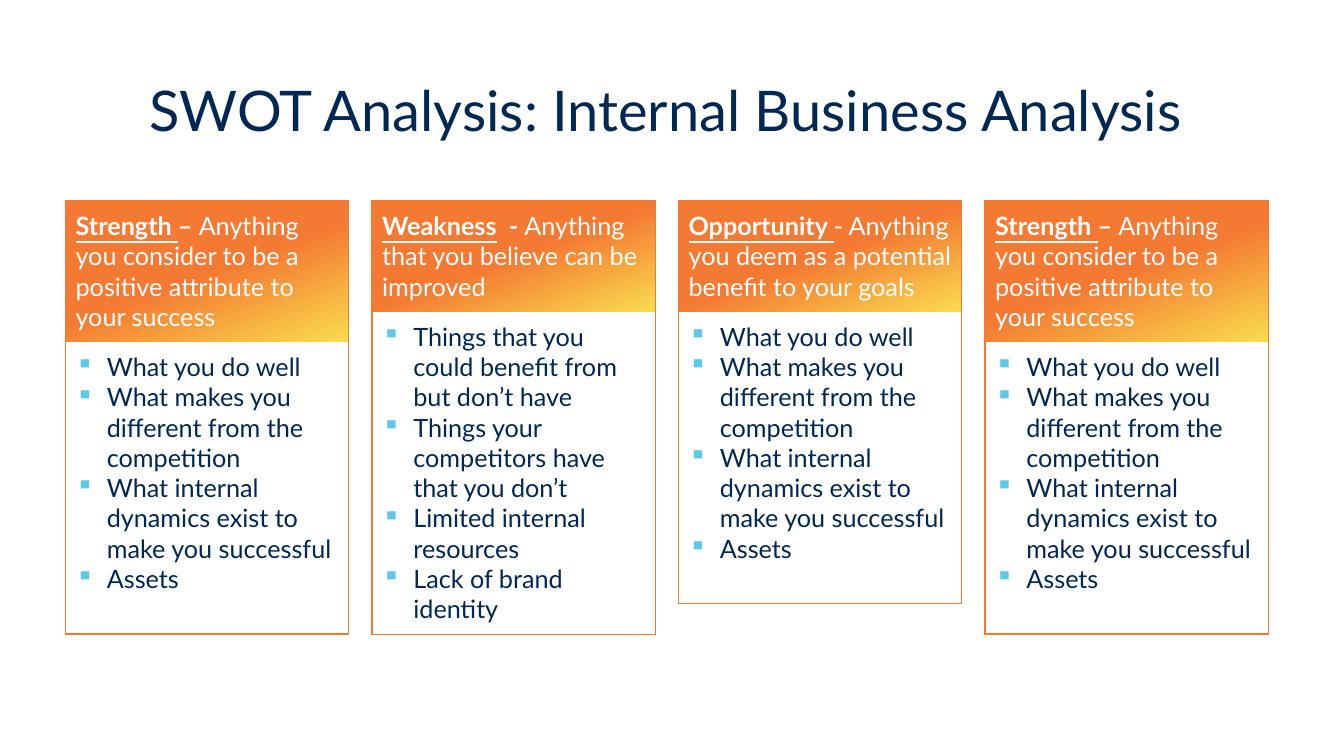
from dataclasses import dataclass

from lxml.etree import SubElement
from pptx import Presentation
from pptx.dml.color import RGBColor
from pptx.enum.text import MSO_ANCHOR, PP_ALIGN
from pptx.oxml import parse_xml
from pptx.oxml.ns import nsdecls, qn
from pptx.slide import Slide
from pptx.table import _Cell
from pptx.text.text import Font
from pptx.util import Inches, Pt

NAVY, WHITE, ORANGE, YELLOW, SKY = "002852", "FFFFFF", "F47932", "FADC4E", "5DC9E7"
FONT = "Lato"
GRID_LEFT, GRID_TOP = 0.65, 1.99
CARD_WIDTH, GUTTER = 2.81, 0.23
LINE_HEIGHT, CELL_INSET = 0.3, 0.1
BULLET_INDENT = 0.31


@dataclass(frozen=True)
class Card:
    name: str
    dash: str
    meaning: str
    points: tuple[str, ...]
    header_lines: int
    body_lines: int
    bold_dash: bool = True


GOOD_POINTS = (
    "What you do well",
    "What makes you different from the competition",
    "What internal dynamics exist to make you successful",
    "Assets",
)
WEAK_POINTS = (
    "Things that you could benefit from but don’t have",
    "Things your competitors have that you don’t",
    "Limited internal resources",
    "Lack of brand identity",
)
STRENGTH = Card(
    "Strength ", "– ",
    "Anything you consider to be a positive attribute to your success",
    GOOD_POINTS, 4, 9,
)
CARDS = (
    STRENGTH,
    Card("Weakness", "  - ", "Anything that you believe can be improved",
         WEAK_POINTS, 3, 10),
    Card("Opportunity ", "- ", "Anything you deem as a potential benefit to your goals",
         GOOD_POINTS, 3, 9, bold_dash=False),
    STRENGTH,
)


def color(hex_value: str) -> RGBColor:
    return RGBColor.from_string(hex_value)


def set_font(font: Font, size: float, hex_value: str) -> None:
    font.name, font.size = FONT, Pt(size)
    font.color.rgb = color(hex_value)


def set_borders(cell: _Cell, sides: str) -> None:
    """Draw the given sides (letters of LRTB) in orange and clear the others."""
    properties = cell._tc.get_or_add_tcPr()
    for index, side in enumerate("LRTB"):
        paint = (f'<a:solidFill><a:srgbClr val="{ORANGE}"/></a:solidFill>'
                 if side in sides else "<a:noFill/>")
        properties.insert(index, parse_xml(
            f'<a:ln{side} {nsdecls("a")} w="{Pt(1)}">{paint}</a:ln{side}>'))


def set_insets(cell: _Cell) -> None:
    cell.margin_left = cell.margin_right = Inches(CELL_INSET)
    cell.margin_top = cell.margin_bottom = Inches(CELL_INSET)


def fill_header(cell: _Cell, card: Card) -> None:
    set_insets(cell)
    cell.fill.gradient()
    cell.fill.gradient_angle = 360 - 70
    for stop, position, hex_value in zip(
            cell.fill.gradient_stops, (0.5, 1), (ORANGE, YELLOW)):
        stop.position = position
        stop.color.rgb = color(hex_value)
    set_borders(cell, "LRT")
    paragraph = cell.text_frame.paragraphs[0]
    set_font(paragraph.font, 18, WHITE)
    for text, bold, underline in (
            (card.name, True, True),
            (card.dash, card.bold_dash, False),
            (card.meaning, False, False)):
        run = paragraph.add_run()
        run.text = text
        set_font(run.font, 18, WHITE)
        run.font.bold, run.font.underline = bold, underline


def fill_body(cell: _Cell, points: tuple[str, ...]) -> None:
    set_insets(cell)
    cell.fill.solid()
    cell.fill.fore_color.rgb = color(WHITE)
    set_borders(cell, "LRB")
    cell.text_frame.text = "\n".join(points)
    for paragraph in cell.text_frame.paragraphs:
        properties = paragraph._p.get_or_add_pPr()
        properties.set("marL", str(Inches(BULLET_INDENT)))
        properties.set("indent", str(-Inches(BULLET_INDENT)))
        bullet_color = SubElement(properties, qn("a:buClr"))
        SubElement(bullet_color, qn("a:srgbClr"), val=SKY)
        SubElement(properties, qn("a:buChar"), char="▪")
        set_font(paragraph.font, 18, NAVY)


def add_card(slide: Slide, column: int, card: Card) -> None:
    heights = [Inches(lines * LINE_HEIGHT + 2 * CELL_INSET)
               for lines in (card.header_lines, card.body_lines)]
    left = GRID_LEFT + column * (CARD_WIDTH + GUTTER)
    table = slide.shapes.add_table(
        2, 1, Inches(left), Inches(GRID_TOP), Inches(CARD_WIDTH), sum(heights)).table
    table.first_row = table.horz_banding = False
    for row, height in zip(table.rows, heights):
        row.height = height
    fill_header(table.cell(0, 0), card)
    fill_body(table.cell(1, 0), card.points)


def add_title(slide: Slide, text: str) -> None:
    box = slide.shapes.add_textbox(Inches(0.92), Inches(0.4), Inches(11.5), Inches(1.45))
    frame = box.text_frame
    frame.word_wrap = True
    frame.vertical_anchor = MSO_ANCHOR.MIDDLE
    paragraph = frame.paragraphs[0]
    paragraph.text = text
    paragraph.alignment = PP_ALIGN.CENTER
    paragraph.line_spacing = 0.9
    set_font(paragraph.font, 40, NAVY)


def main() -> None:
    presentation = Presentation()
    presentation.slide_width, presentation.slide_height = Inches(13.33), Inches(7.5)
    slide = presentation.slides.add_slide(presentation.slide_layouts[6])
    add_title(slide, "SWOT Analysis: Internal Business Analysis ")
    for column, card in enumerate(CARDS):
        add_card(slide, column, card)
    presentation.save("out.pptx")


if __name__ == "__main__":
    main()
